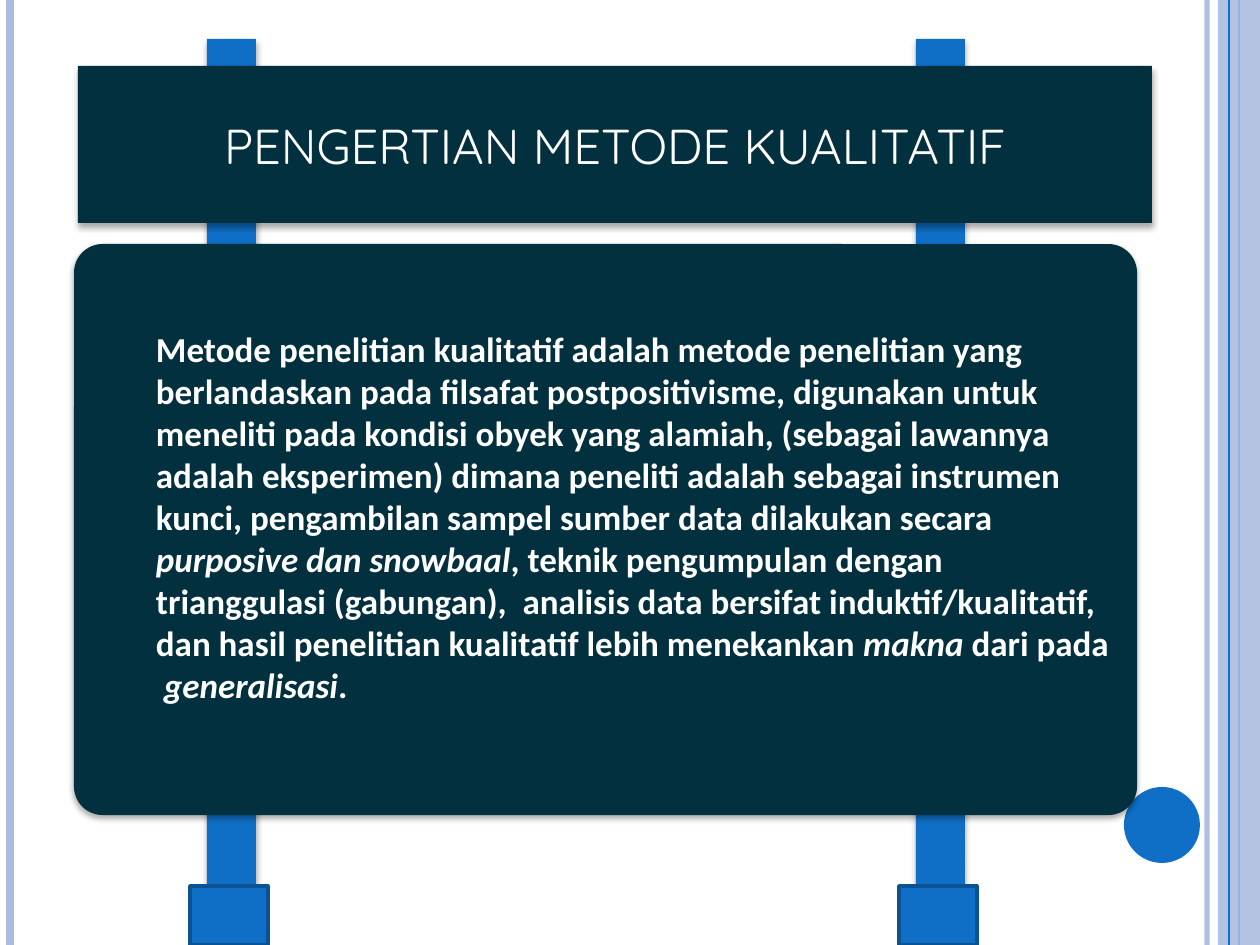
from dataclasses import dataclass

from lxml.etree import SubElement
from pptx import Presentation
from pptx.dml.color import RGBColor
from pptx.enum.shapes import MSO_CONNECTOR, MSO_SHAPE
from pptx.enum.text import MSO_ANCHOR, MSO_AUTO_SIZE, PP_ALIGN
from pptx.oxml import parse_xml
from pptx.oxml.ns import nsdecls, qn
from pptx.util import Pt

SCALE = 914400 / 126
WIDTH, HEIGHT = 1260, 945


@dataclass(frozen=True)
class Theme:
    blue: RGBColor = RGBColor(0x0F, 0x6F, 0xC6)
    edge: RGBColor = RGBColor(0x0B, 0x52, 0x92)
    pale: RGBColor = RGBColor(0xAB, 0xBB, 0xDF)
    card: RGBColor = RGBColor(0x02, 0x30, 0x3E)
    text: RGBColor = RGBColor(0xFF, 0xFF, 0xFF)
    title_font: str = "Quicksand"
    body_font: str = "Calibri"
    title_size: int = 28
    body_size: int = 20


THEME = Theme()
TITLE = "PENGERTIAN METODE KUALITATIF"
DEFINITION = [
    ("Metode penelitian kualitatif adalah metode penelitian yang berlandaskan pada "
     "filsafat postpositivisme, digunakan untuk meneliti pada kondisi obyek yang alamiah, "
     "(sebagai lawannya adalah eksperimen) dimana peneliti adalah sebagai instrumen kunci, "
     "pengambilan sampel sumber data dilakukan secara ", False),
    ("purposive dan snowbaal", True),
    (", teknik pengumpulan dengan trianggulasi (gabungan),  analisis data bersifat "
     "induktif/kualitatif, dan hasil penelitian kualitatif lebih menekankan ", False),
    ("makna ", True),
    ("dari pada  ", False),
    ("generalisasi", True),
    (".", False),
]


def px(length):
    return round(length * SCALE)


def set_opacity(properties, percent):
    color = next(properties.iter(qn("a:srgbClr")))
    SubElement(color, qn("a:alpha"), val=str(percent * 1000))


def add_shadow(shape):
    shape.shadow.inherit = False
    effects = shape.element.spPr.find(qn("a:effectLst"))
    effects.append(parse_xml(
        f'<a:outerShdw {nsdecls("a")} blurRad="44450" dist="27940" dir="5400000" '
        'algn="ctr" rotWithShape="0"><a:srgbClr val="000000">'
        '<a:alpha val="32000"/></a:srgbClr></a:outerShdw>'))


def add_block(page, box, kind, color):
    block = page.shapes.add_shape(kind, *map(px, box))
    block.shadow.inherit = False
    block.fill.solid()
    block.fill.fore_color.rgb = color
    block.line.fill.background()
    return block


def add_stripe(page, x, color, weight):
    stripe = page.shapes.add_connector(
        MSO_CONNECTOR.STRAIGHT, px(x), 0, px(x), px(HEIGHT))
    stripe.line.color.rgb = color
    stripe.line.width = Pt(weight)
    SubElement(stripe.element.spPr, qn("a:effectLst"))
    return stripe


def add_border(page, box):
    left, top, width, height = box
    inner = add_stripe(page, left + width - 53, THEME.pale, 3)
    set_opacity(inner.element.spPr, 93)
    add_stripe(page, left + 10, THEME.pale, 4.5)
    add_stripe(page, left + width - 21, THEME.blue, 1.5)
    band = add_block(page, (left + width - 42, top, 42, height),
                     MSO_SHAPE.RECTANGLE, THEME.pale)
    set_opacity(band.element.spPr, 87)
    add_stripe(page, left + width - 31, THEME.blue, 0.75)
    add_block(page, (left + width - 136, top + 787, 76, 76), MSO_SHAPE.OVAL, THEME.blue)


def add_post(page, box):
    left, top, width, height = box
    foot_height = 59
    rail = add_block(page, (left + 17, top, width - 29, height - foot_height),
                     MSO_SHAPE.RECTANGLE, THEME.blue)
    add_shadow(rail)
    foot = add_block(page, (left, top + height - foot_height, width, foot_height),
                     MSO_SHAPE.RECTANGLE, THEME.blue)
    foot.line.color.rgb = THEME.edge
    foot.line.width = Pt(2)


def make_card(page, holder, box, rounding):
    holder.left, holder.top, holder.width, holder.height = map(px, box)
    holder.element.spPr.insert(1, parse_xml(
        f'<a:prstGeom {nsdecls("a")} prst="roundRect"><a:avLst>'
        f'<a:gd name="adj" fmla="val {rounding}"/></a:avLst></a:prstGeom>'))
    holder.fill.solid()
    holder.fill.fore_color.rgb = THEME.card
    holder.line.fill.background()
    add_shadow(holder)
    page.shapes.element.append(holder.element)
    frame = holder.text_frame
    frame.word_wrap = True
    frame.auto_size = MSO_AUTO_SIZE.NONE
    frame.vertical_anchor = MSO_ANCHOR.MIDDLE
    para = frame.paragraphs[0]
    para.font.color.rgb = THEME.text
    para.space_before = Pt(0)
    return frame, para


def add_title(page, box):
    frame, para = make_card(page, page.shapes.title, box, 7500)
    para.text = TITLE
    para.alignment = PP_ALIGN.CENTER
    para.font.name = THEME.title_font
    para.font.size = Pt(THEME.title_size)


def add_definition(page, box):
    frame, para = make_card(page, page.placeholders[1], box, 5000)
    frame.margin_bottom = px(32)
    properties = para._p.get_or_add_pPr()
    properties.set("marL", str(px(61)))
    properties.set("indent", "0")
    properties.insert_element_before(
        parse_xml(f'<a:buNone {nsdecls("a")}/>'), "a:tabLst", "a:defRPr", "a:extLst")
    para.alignment = PP_ALIGN.LEFT
    para.font.name = THEME.body_font
    para.font.size = Pt(THEME.body_size)
    para.font.bold = True
    for words, italic in DEFINITION:
        span = para.add_run()
        span.text = words
        span.font.italic = italic
        span.font.bold = True
        span.font.size = Pt(THEME.body_size)
        span.font.name = THEME.body_font
        span.font.color.rgb = THEME.text


def style_title_span(page):
    span = page.shapes.title.text_frame.paragraphs[0].runs[0]
    span.font.name = THEME.title_font
    span.font.size = Pt(THEME.title_size)
    span.font.color.rgb = THEME.text


def main():
    deck = Presentation()
    deck.slide_width, deck.slide_height = px(WIDTH), px(HEIGHT)
    page = deck.slides.add_slide(deck.slide_layouts[1])
    add_border(page, (0, 0, WIDTH, HEIGHT))
    for left in (190, 899):
        add_post(page, (left, 39, 78, HEIGHT - 39))
    add_title(page, (78, 66, 1074, 157))
    style_title_span(page)
    add_definition(page, (74, 244, 1063, 571))
    deck.save("out.pptx")


if __name__ == "__main__":
    main()
